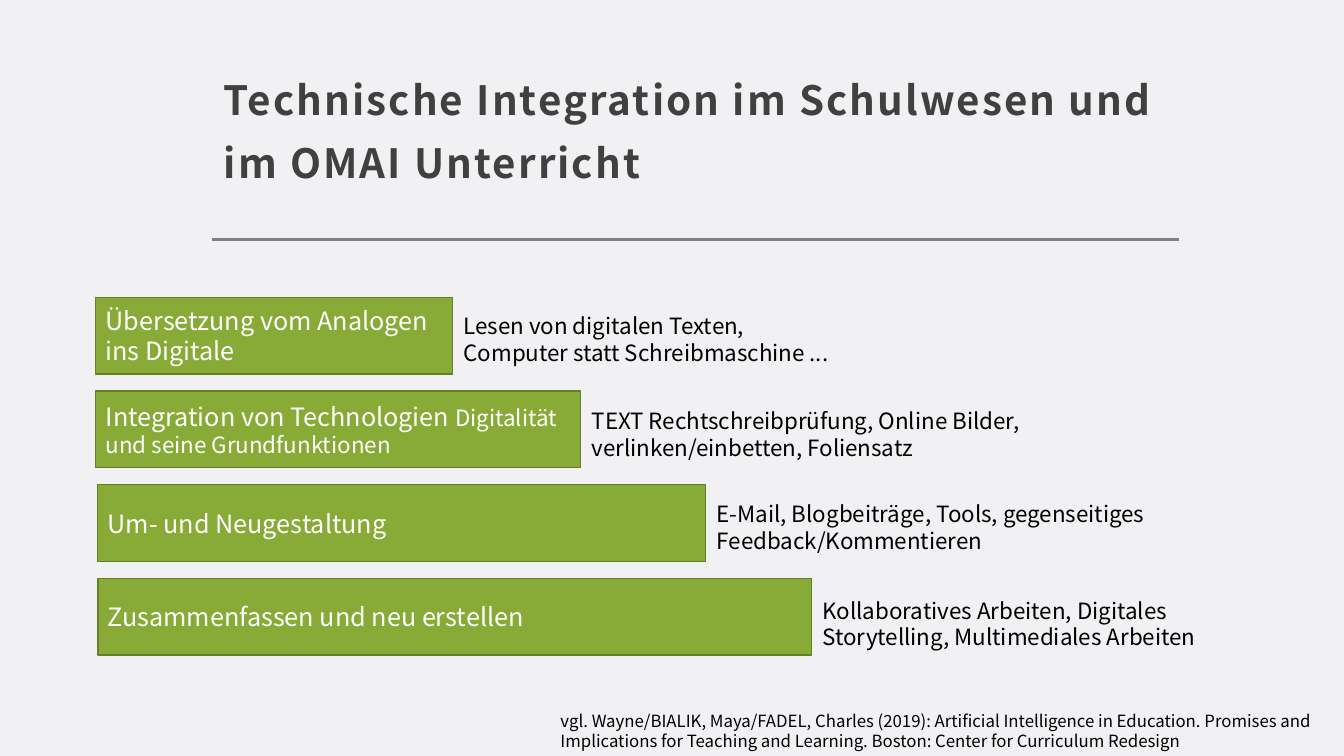
from pptx import Presentation
from pptx.dml.color import RGBColor
from pptx.enum.shapes import MSO_CONNECTOR, MSO_SHAPE
from pptx.enum.text import MSO_ANCHOR, MSO_AUTO_SIZE, PP_ALIGN
from pptx.oxml.ns import qn
from pptx.util import Inches, Pt
from dataclasses import dataclass
from lxml import etree

RECT, STRAIGHT = MSO_SHAPE.RECTANGLE, MSO_CONNECTOR.STRAIGHT
TOP, MIDDLE, BOTTOM = MSO_ANCHOR.TOP, MSO_ANCHOR.MIDDLE, MSO_ANCHOR.BOTTOM
LEFT = PP_ALIGN.LEFT
GROW, NO_FIT = MSO_AUTO_SIZE.SHAPE_TO_FIT_TEXT, MSO_AUTO_SIZE.NONE

# Content
TITLE = "Technische Integration im Schulwesen und im OMAI Unterricht"
# Each step: bar left, bar width, bar runs (text, size name), note top, note width, note lines
STEPS = [
    (0.95, 3.54, [("Übersetzung vom Analogen ins Digitale", "bar")],
     3.05, 4.81, ["Lesen von digitalen Texten,", "Computer statt Schreibmaschine ..."]),
    (0.95, 4.81, [("Integration von Technologien ", "bar"),
                  ("Digitalität und seine Grundfunktionen", "note")],
     3.99, 4.81, ["TEXT Rechtschreibprüfung, Online Bilder, verlinken/einbetten, Foliensatz"]),
    (0.97, 6.03, [("Um- und Neugestaltung", "bar")],
     4.91, 4.81, ["E-Mail, Blogbeiträge, Tools, gegenseitiges Feedback/Kommentieren"]),
    (0.97, 7.08, [("Zusammenfassen und neu erstellen", "bar")],
     5.87, 4.54, ["Kollaboratives Arbeiten, Digitales Storytelling, Multimediales Arbeiten"]),
]
SOURCE = ("vgl. Wayne/BIALIK, Maya/FADEL, Charles (2019): Artificial Intelligence in Education. "
          "Promises and Implications for Teaching and Learning. "
          "Boston: Center for Curriculum Redesign")

# Layout
BAR_TOP, BAR_STEP, BAR_HEIGHT = 2.95, 0.93, 0.76
NOTE_GAP, NOTE_HEIGHT = 0.01, 0.64


@dataclass(frozen=True)
class Theme:
    font: str = "Noto Sans CJK JP"
    background: str = "F1F0F3"
    heading: str = "404040"
    rule: str = "808080"
    bar: str = "87AB36"
    bar_line: str = "647F28"
    bar_text: str = "FFFFFF"
    text: str = "000000"
    title_size: float = 28.8
    bar_size: float = 18
    note_size: float = 16
    source_size: float = 12


THEME = Theme()


def rgb(value):
    return RGBColor.from_string(value)


def write(s, paragraphs, color=THEME.text, bold=False, anchor=TOP, fit=NO_FIT,
          line_spacing=None, tracking=None):
    """Fill a shape with paragraphs, each a list of (text, size) runs."""
    tf = s.text_frame
    tf.word_wrap, tf.auto_size, tf.vertical_anchor = True, fit, anchor
    for i, runs in enumerate(paragraphs):
        p = tf.add_paragraph() if i else tf.paragraphs[0]
        p.alignment = LEFT
        p.space_before = p.space_after = Pt(0)
        if line_spacing:
            p.line_spacing = line_spacing
        for text, size in runs:
            r = p.add_run()
            r.text = text
            r.font.name, r.font.size, r.font.bold = THEME.font, Pt(size), bold
            r.font.color.rgb = rgb(color)
            if tracking:
                r.font._element.set("spc", str(int(tracking * 100)))


def add_note(slide, box, lines, size):
    s = slide.shapes.add_textbox(*map(Inches, box))
    write(s, [[(line, size)] for line in lines], fit=GROW)


def add_bar(slide, box, runs):
    sizes = {"bar": THEME.bar_size, "note": THEME.note_size}
    s = slide.shapes.add_shape(RECT, *map(Inches, box))
    s.shadow.inherit = False
    s.fill.solid()
    s.fill.fore_color.rgb = rgb(THEME.bar)
    s.line.color.rgb = rgb(THEME.bar_line)
    s.line.width = Pt(1)
    write(s, [[(text, sizes[name]) for text, name in runs]],
          color=THEME.bar_text, anchor=MIDDLE)


def main():
    prs = Presentation()
    prs.slide_width, prs.slide_height = Inches(13.33), Inches(7.5)
    slide = prs.slides.add_slide(prs.slide_layouts[5])
    slide.background.fill.solid()
    slide.background.fill.fore_color.rgb = rgb(THEME.background)

    # Rule under the title
    rule = slide.shapes.add_connector(
        STRAIGHT, Inches(2.1), Inches(2.38), Inches(11.69), Inches(2.38))
    rule.line.color.rgb = rgb(THEME.rule)
    rule.line.width = Pt(2)
    etree.SubElement(rule._element.spPr, qn("a:effectLst"))

    # Title
    title = slide.shapes.title
    title.left, title.top, title.width, title.height = map(Inches, (2.1, 0.48, 9.59, 1.47))
    tf = title.text_frame
    tf.margin_left = tf.margin_right = tf.margin_top = Inches(0.12)
    tf.margin_bottom = Inches(0.1)
    write(title, [[(TITLE, THEME.title_size)]], color=THEME.heading, bold=True,
          anchor=BOTTOM, line_spacing=1.3, tracking=1.5)

    # Growing bars, each with examples to its right
    for i, (left, width, runs, note_top, note_width, lines) in enumerate(STEPS):
        add_bar(slide, (left, BAR_TOP + i * BAR_STEP, width, BAR_HEIGHT), runs)
        note_left = left + width + NOTE_GAP
        add_note(slide, (note_left, note_top, note_width, NOTE_HEIGHT), lines, THEME.note_size)

    # Source
    add_note(slide, (5.46, 7, 7.89, 0.5), [SOURCE], THEME.source_size)

    prs.save("out.pptx")


if __name__ == "__main__":
    main()
